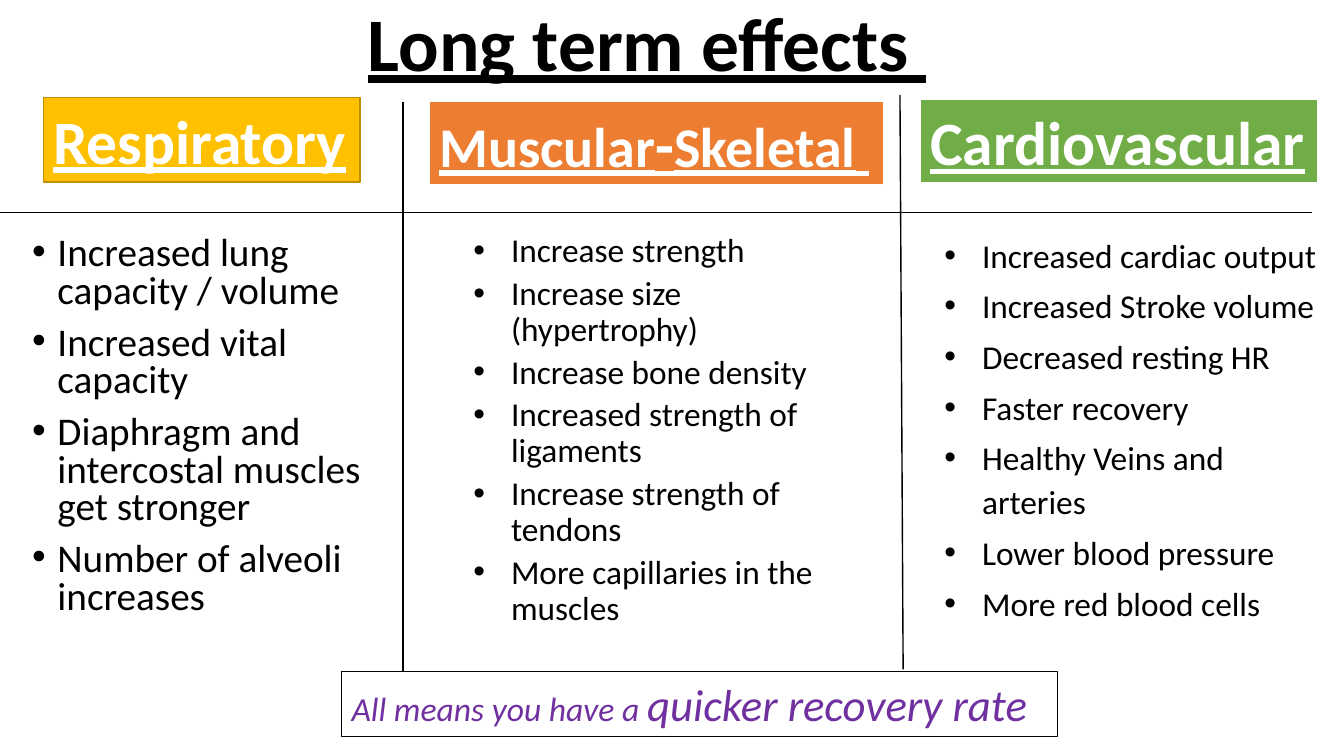
from pptx import Presentation
from pptx.dml.color import RGBColor
from pptx.enum.shapes import MSO_CONNECTOR as Connector, MSO_SHAPE as Shape
from pptx.enum.text import MSO_ANCHOR as Anchor, MSO_AUTO_SIZE as AutoSize, PP_ALIGN as Align
from pptx.oxml.ns import qn
from pptx.util import Cm, Pt
from lxml.etree import SubElement

BLACK = RGBColor(0x00, 0x00, 0x00)
WHITE = RGBColor(0xFF, 0xFF, 0xFF)
GOLD = RGBColor(0xFF, 0xC0, 0x00)
DARK_GOLD = RGBColor(0xBD, 0x8E, 0x00)
ORANGE = RGBColor(0xED, 0x7D, 0x31)
GREEN = RGBColor(0x70, 0xAD, 0x47)
PURPLE = RGBColor(0x70, 0x30, 0xA0)
FONT = "Calibri"
HEADER_HEIGHT = 2.13

COLUMNS = [
    dict(
        header=(1.09, 2.46, 7.98), fill=GOLD, line=(DARK_GOLD, 1),
        heading=[("Respiratory", 44)],
        body=(0.56, 5.84, 9.4, 10.74), size=28, indent=0.64, spacing=0.8, before=10,
        effects=[
            "Increased lung capacity / volume",
            "Increased vital capacity",
            "Diaphragm and intercostal muscles get stronger",
            "Number of alveoli increases",
        ],
    ),
    dict(
        header=(10.82, 2.54, 11.46), fill=ORANGE, line=(WHITE, 1.5),
        heading=[("Muscular", 40), ("-", 44), ("Skeletal", 40), (" ", 44)],
        body=(11.68, 5.77, 10.44, 11.05), size=23.8, indent=0.95, spacing=0.9, before=4.8,
        effects=[
            "Increase strength",
            "Increase size (hypertrophy)",
            "Increase bone density",
            "Increased strength of ligaments",
            "Increase strength of tendons",
            "More capillaries in the muscles",
        ],
    ),
    dict(
        header=(23.19, 2.49, 10.03), fill=GREEN, line=(WHITE, 1.5),
        heading=[("Cardiovascular", 44)],
        body=(23.55, 5.69, 10.31, 12.5), size=23.8, indent=0.95, spacing=1.1, before=4.8,
        effects=[
            "Increased cardiac output",
            "Increased Stroke volume",
            "Decreased resting HR",
            "Faster recovery",
            "Healthy Veins and arteries",
            "Lower blood pressure",
            "More red blood cells",
        ],
    ),
]
DIVIDERS = [
    (0, 5.36, 33.07, 5.36),
    (10.16, 2.57, 10.16, 16.92),
    (22.68, 2.39, 22.76, 16.87),
]


def add_run(para, text, size, color, **styles):
    """Append one run with its size, colour and font styles."""
    span = para.add_run()
    span.text = text
    span.font.name = FONT
    span.font.size = Pt(size)
    span.font.color.rgb = color
    for style, value in styles.items():
        setattr(span.font, style, value)


def add_title(page, box):
    """Place the underlined title in the middle of its box."""
    frame = page.shapes.add_textbox(*map(Cm, box)).text_frame
    frame.word_wrap = True
    frame.vertical_anchor = Anchor.MIDDLE
    para = frame.paragraphs[0]
    para.alignment = Align.CENTER
    para.line_spacing = 0.9
    add_run(para, "Long term effects ", 54, BLACK, bold=True, underline=True)


def add_label(page, box, fill, line, runs, color, **styles):
    """Draw a rectangle fitted around one line of text."""
    label = page.shapes.add_shape(Shape.RECTANGLE, *map(Cm, box))
    label.shadow.inherit = False
    if fill is None:
        label.fill.background()
    else:
        label.fill.solid()
        label.fill.fore_color.rgb = fill
    label.line.color.rgb = line[0]
    label.line.width = Pt(line[1])
    frame = label.text_frame
    frame.word_wrap = False
    frame.auto_size = AutoSize.SHAPE_TO_FIT_TEXT
    frame.vertical_anchor = Anchor.TOP
    para = frame.paragraphs[0]
    para.alignment = Align.LEFT
    for text, size in runs:
        add_run(para, text, size, color, **styles)


def add_effects(page, column):
    """Fill the body box of a column with its bulleted effects."""
    frame = page.shapes.add_textbox(*map(Cm, column["body"])).text_frame
    frame.word_wrap = True
    for index, effect in enumerate(column["effects"]):
        para = frame.add_paragraph() if index else frame.paragraphs[0]
        para.line_spacing = column["spacing"]
        para.space_before = Pt(column["before"])
        properties = para._p.get_or_add_pPr()
        properties.set("marL", str(Cm(column["indent"])))
        properties.set("indent", str(-Cm(column["indent"])))
        SubElement(properties, qn("a:buFont")).set("typeface", "Arial")
        SubElement(properties, qn("a:buChar")).set("char", "•")
        add_run(para, effect, column["size"], BLACK)


def add_column(page, column):
    """Place a coloured heading and the list of effects under it."""
    add_effects(page, column)
    add_label(page, (*column["header"], HEADER_HEIGHT), column["fill"], column["line"],
              column["heading"], WHITE, bold=True, underline=True)


def add_divider(page, ends):
    """Draw one thin black line between two points."""
    divider = page.shapes.add_connector(Connector.STRAIGHT, *map(Cm, ends))
    divider.line.color.rgb = BLACK
    divider.line.width = Pt(1)
    SubElement(divider._element.spPr, qn("a:effectLst"))


def add_summary(page, box):
    """Place the framed conclusion at the foot of the page."""
    runs = [("All means you have a ", 24), ("quicker recovery rate", 32)]
    add_label(page, box, None, (BLACK, 0.75), runs, PURPLE, italic=True)


def main():
    """Build the slide and save the deck."""
    deck = Presentation()
    deck.slide_width, deck.slide_height = Cm(33.87), Cm(19.05)
    page = deck.slides.add_slide(deck.slide_layouts[6])
    add_title(page, (1.07, 0, 30.48, 2.36))
    for column in COLUMNS:
        add_column(page, column)
    for ends in DIVIDERS:
        add_divider(page, ends)
    add_summary(page, (8.61, 16.92, 18.03, 1.63))
    deck.save("out.pptx")


if __name__ == "__main__":
    main()
